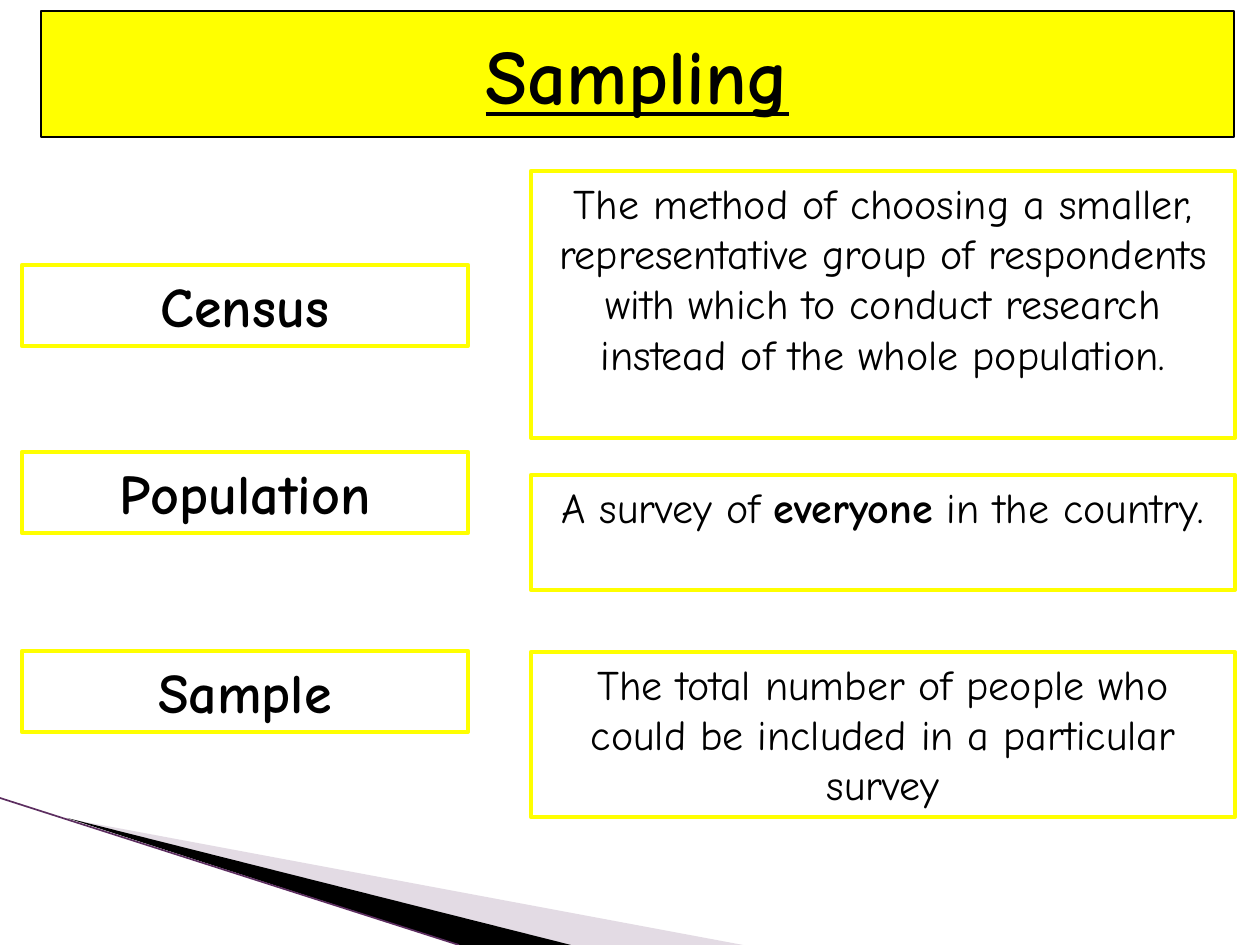
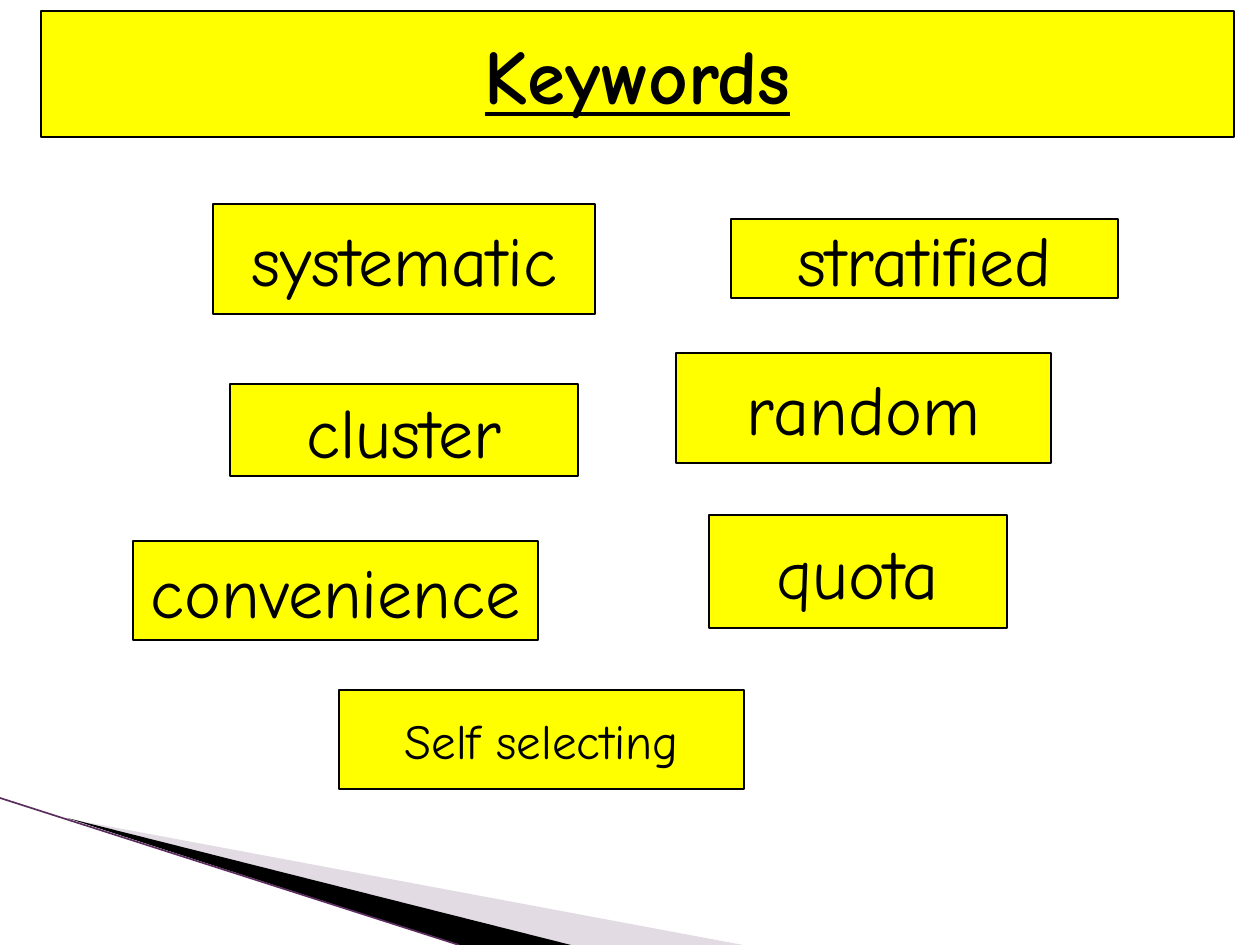
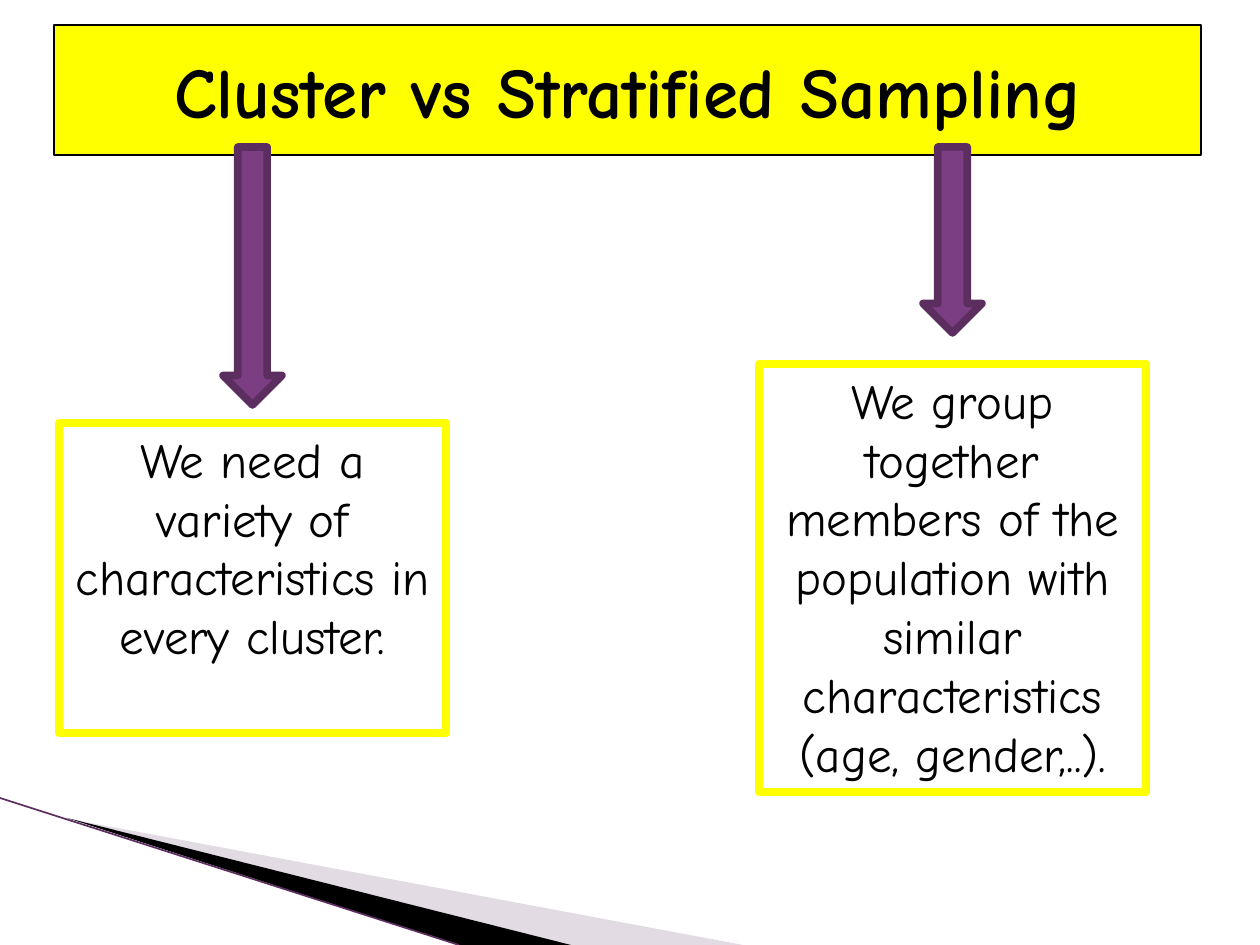
from dataclasses import dataclass

from lxml.etree import SubElement
from pptx import Presentation
from pptx.dml.color import RGBColor
from pptx.enum.shapes import MSO_CONNECTOR, MSO_SHAPE
from pptx.enum.text import MSO_ANCHOR, PP_ALIGN
from pptx.oxml.ns import qn
from pptx.util import Emu, Pt

PX = 914400 / 126
WIDE, HIGH = 1260, 945


@dataclass(frozen=True)
class Theme:
    font: str = "Comic Neue"
    ink: str = "000000"
    glow: str = "FFFF00"
    plum: str = "7C3E82"
    dark: str = "5C2E60"
    mist: str = "B9A5BC"
    head: float = 44
    long: float = 40.7
    word: float = 40
    term: float = 32
    note: float = 28
    body: float = 24
    hair: float = 0.75
    frame: float = 2.5
    thick: float = 4.5
    edge: float = 4.33
    sweep: float = 0.95


T = Theme()
SOLID = {"fill": T.glow, "line": T.ink, "width": T.hair, "anchor": MSO_ANCHOR.MIDDLE}
FRAME = {"line": T.glow, "width": T.frame, "anchor": MSO_ANCHOR.TOP}
THICK = FRAME | {"width": T.thick}
ARROW = {"fill": T.plum, "line": T.dark, "width": T.edge}
BAND = (41, 11, 1193, 126)

# Term and its top; every term box has the same left, width and height
TERMS = [("Census", 265), ("Population", 452), ("Sample", 651)]
# Meaning, top and height; words between asterisks are bold
NOTES = [
    ("The method of choosing a smaller, representative group of respondents "
     "with which to conduct research instead of the whole population.", 171, 267),
    ("A survey of *everyone* in the country.", 475, 115),
    ("The total number of people who could be included in a particular survey", 652, 165),
]
WORDS = [
    ("systematic", (213, 204, 382, 110), T.word),
    ("stratified", (731, 219, 387, 79), T.word),
    ("cluster", (230, 384, 348, 92), T.word),
    ("random", (676, 353, 375, 110), T.word),
    ("convenience", (133, 541, 405, 99), T.word),
    ("quota", (709, 515, 298, 113), T.word),
    ("Self selecting", (339, 690, 405, 99), T.note),
]
# Text, box, and length of the arrow above it
SIDES = [
    ("We need a variety of characteristics in every cluster.", (59, 423, 387, 310), 258),
    ("We group together members of the population with similar characteristics "
     "(age, gender,..).", (759, 364, 387, 428), 186),
]
# Corners, colour and opacity in percent
WEDGES = [
    ([(69, 819), (743, HIGH), (570, HIGH)], T.mist, 40),
    ([(67, 818), (571, HIGH), (459, HIGH)], T.ink, 100),
]


def emu(*nums):
    return [Emu(round(n * PX)) for n in nums]


def tint(part, hue):
    part.solid()
    part.fore_color.rgb = RGBColor.from_string(hue)


def paint(shape, fill=None, line=None, width=0):
    shape.shadow.inherit = False
    if fill:
        tint(shape.fill, fill)
    else:
        shape.fill.background()
    if line:
        tint(shape.line.fill, line)
        shape.line.width = Pt(width)
    else:
        shape.line.fill.background()


def write(frame, text, size, anchor, bold=False, under=False, wrap=True):
    """Fill a frame with one centred paragraph; *words* are bold."""
    frame.word_wrap, frame.vertical_anchor = wrap, anchor
    para = frame.paragraphs[0]
    para.alignment = PP_ALIGN.CENTER
    for i, part in enumerate(text.split("*")):
        run = para.add_run()
        run.text = part
        look = {"name": T.font, "size": Pt(size), "bold": bold or i % 2 == 1,
                "underline": under}
        for key, value in look.items():
            setattr(run.font, key, value)
        run.font.color.rgb = RGBColor.from_string(T.ink)


def box(slide, at, text, size, look, **style):
    shape = slide.shapes.add_shape(MSO_SHAPE.RECTANGLE, *emu(*at))
    paint(shape, look.get("fill"), look["line"], look["width"])
    write(shape.text_frame, text, size, look["anchor"], **style)


def sweep(slide):
    """Draw the wedges and thin line at the foot of every slide."""
    for (start, *rest), hue, alpha in WEDGES:
        pen = slide.shapes.build_freeform(*start, scale=PX)
        pen.add_line_segments(rest, close=True)
        wedge = pen.convert_to_shape()
        paint(wedge, hue)
        if alpha < 100:
            color = wedge.fill._xPr.find(".//" + qn("a:srgbClr"))
            SubElement(color, qn("a:alpha")).set("val", str(alpha * 1000))
    line = slide.shapes.add_connector(MSO_CONNECTOR.STRAIGHT, *emu(0, 798, 459, HIGH))
    tint(line.line.fill, T.dark)
    line.line.width = Pt(T.sweep)
    SubElement(line._element.spPr, qn("a:effectLst"))


def start(deck, title, at=BAND, size=T.head, under=True):
    slide = deck.slides.add_slide(deck.slide_layouts[6])
    sweep(slide)
    box(slide, at, title, size, SOLID, bold=True, under=under)
    return slide


def sampling(deck):
    slide = start(deck, "Sampling")
    for term, top in TERMS:
        box(slide, (22, top, 446, 81), term, T.term, FRAME, bold=True)
    for note, top, high in NOTES:
        box(slide, (531, top, 704, high), note, T.body, FRAME)


def keywords(deck):
    slide = start(deck, "Keywords")
    for word, at, size in WORDS:
        box(slide, at, word, size, SOLID, wrap=False)


def versus(deck):
    slide = start(deck, "Cluster vs Stratified Sampling", (54, 25, 1147, 130),
                  T.long, under=False)
    wide = 59
    for text, at, high in SIDES:
        box(slide, at, text, T.note, THICK)
        left = at[0] + (at[2] - wide) / 2
        arrow = slide.shapes.add_shape(MSO_SHAPE.DOWN_ARROW, *emu(left, 147, wide, high))
        paint(arrow, **ARROW)


def main():
    deck = Presentation()
    deck.slide_width, deck.slide_height = emu(WIDE, HIGH)
    for build in (sampling, keywords, versus):
        build(deck)
    deck.save("out.pptx")


if __name__ == "__main__":
    main()
